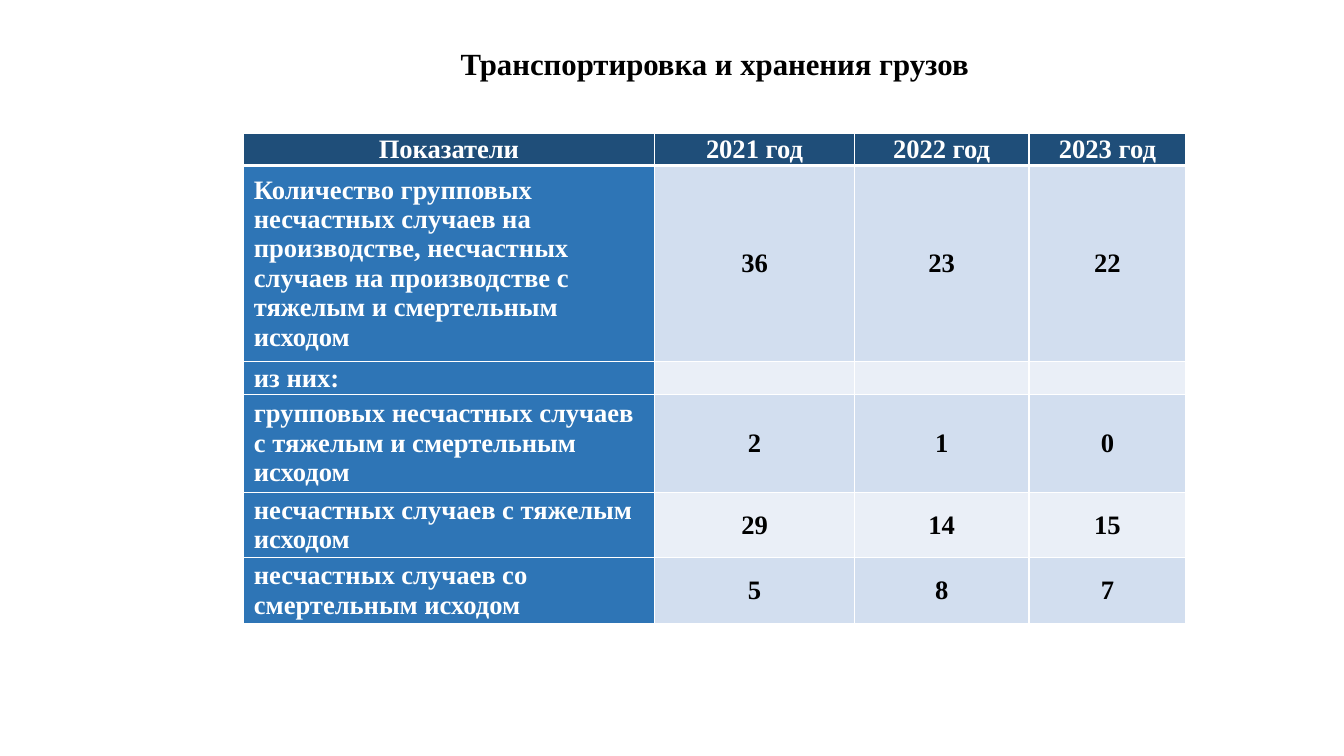
from dataclasses import dataclass

import pptx
import pptx.dml.color
import pptx.enum.text
import pptx.oxml.ns
import pptx.util
from lxml import etree

Cm = pptx.util.Cm
Pt = pptx.util.Pt
CENTER = pptx.enum.text.PP_ALIGN.CENTER
LEFT = pptx.enum.text.PP_ALIGN.LEFT
MIDDLE = pptx.enum.text.MSO_ANCHOR.MIDDLE


@dataclass(frozen=True)
class Theme:
    font: str = "Times New Roman"
    title_size: float = 22
    table_size: float = 19
    dark_text: str = "000000"
    light_text: str = "FFFFFF"
    header_fill: str = "1F4E79"
    label_fill: str = "2E75B6"
    band_fills: tuple = ("D2DEEF", "EAEFF7")
    border: str = "FFFFFF"
    border_width: float = 1
    header_rule_width: float = 3


THEME = Theme()

TITLE = "Транспортировка и хранения грузов"
ROWS = [
    ("Показатели", "2021 год", "2022 год", "2023 год"),
    ("Количество групповых несчастных случаев на производстве, "
     "несчастных случаев на производстве с тяжелым и смертельным исходом",
     "36", "23", "22"),
    ("из них:", "", "", ""),
    ("групповых несчастных случаев с тяжелым и смертельным исходом",
     "2", "1", "0"),
    ("несчастных случаев с тяжелым исходом", "29", "14", "15"),
    ("несчастных случаев со смертельным исходом", "5", "8", "7"),
]
COLUMN_WIDTHS = (10.37, 5.03, 4.4, 3.96)
ROW_HEIGHTS = (0.82, 4.95, 0.82, 2.47, 1.65, 1.65)


def rgb(color):
    return pptx.dml.color.RGBColor.from_string(color)


def format_text(text_frame, size, color, alignment):
    for paragraph in text_frame.paragraphs:
        paragraph.alignment = alignment
        for run in paragraph.runs:
            run.font.name = THEME.font
            run.font.size = Pt(size)
            run.font.bold = True
            run.font.color.rgb = rgb(color)


def add_borders(cell, widths):
    qn = pptx.oxml.ns.qn
    properties = cell._tc.get_or_add_tcPr()
    for side, width in widths.items():
        line = etree.SubElement(properties, qn(f"a:ln{side}"), w=str(Pt(width)))
        fill = etree.SubElement(line, qn("a:solidFill"))
        etree.SubElement(fill, qn("a:srgbClr"), val=THEME.border)


def style_cell(cell, row, column):
    is_header, is_label = row == 0, column == 0
    if is_header:
        fill = THEME.header_fill
    elif is_label:
        fill = THEME.label_fill
    else:
        fill = THEME.band_fills[(row - 1) % 2]
    color = THEME.light_text if is_header or is_label else THEME.dark_text
    alignment = LEFT if is_label and not is_header else CENTER

    cell.margin_left = cell.margin_right = Cm(0.27)
    cell.margin_top = cell.margin_bottom = 0
    cell.vertical_anchor = MIDDLE
    format_text(cell.text_frame, THEME.table_size, color, alignment)

    widths = dict.fromkeys("LRTB", THEME.border_width)
    if is_header:
        widths["B"] = THEME.header_rule_width
    elif row == 1:
        widths["T"] = THEME.header_rule_width
    add_borders(cell, widths)
    cell.fill.solid()
    cell.fill.fore_color.rgb = rgb(fill)


def add_title(slide, left, top, width, height):
    shape = slide.shapes.add_textbox(Cm(left), Cm(top), Cm(width), Cm(height))
    shape.text_frame.word_wrap = True
    shape.text_frame.text = TITLE
    format_text(shape.text_frame, THEME.title_size, THEME.dark_text, CENTER)


def add_accident_table(slide, left, top, width, height):
    shape = slide.shapes.add_table(
        len(ROWS), len(COLUMN_WIDTHS), Cm(left), Cm(top), Cm(width), Cm(height))
    table = shape.table
    for column, share in zip(table.columns, COLUMN_WIDTHS):
        column.width = Cm(width * share / sum(COLUMN_WIDTHS))
    for row, share in zip(table.rows, ROW_HEIGHTS):
        row.height = Cm(height * share / sum(ROW_HEIGHTS))
    for row, values in enumerate(ROWS):
        for column, value in enumerate(values):
            cell = table.cell(row, column)
            cell.text_frame.text = value
            style_cell(cell, row, column)


def main():
    presentation = pptx.Presentation()
    presentation.slide_width = Cm(33.87)
    presentation.slide_height = Cm(19.05)
    slide = presentation.slides.add_slide(presentation.slide_layouts[6])
    left, width = 6.13, 23.76
    add_accident_table(slide, left, 3.35, width, 12.36)
    add_title(slide, left, 1, width, 1.2)
    presentation.save("out.pptx")


if __name__ == "__main__":
    main()
